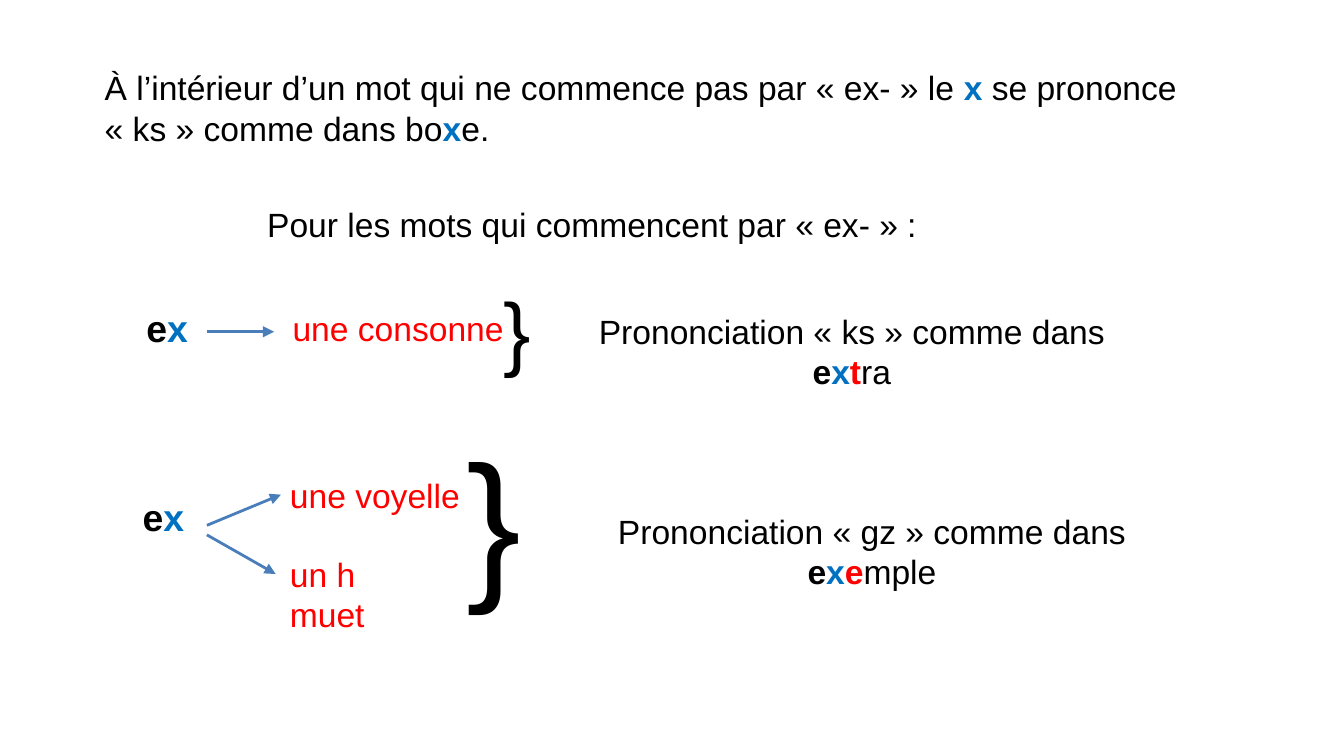
from lxml import etree
from pptx import Presentation
from pptx.dml.color import RGBColor
from pptx.enum.shapes import MSO_CONNECTOR
from pptx.enum.text import MSO_AUTO_SIZE, PP_ALIGN
from pptx.oxml.ns import qn
from pptx.util import Cm, Pt

BLACK, BLUE, RED, ARROW = "000000", "0070C0", "FF0000", "4A7EBB"
EX = [("e", BLACK, True), ("x", BLUE, True)]


def rgb(code):
    return RGBColor.from_string(code)


class Lesson:
    """Text style and the slide being filled."""

    font = "Arial"
    inset_x, inset_y = 0.25, 0.13

    def __init__(self, s):
        self.s = s

    def text(self, x, y, w, h, runs, size=18, centred=False, wrap=True,
             right=0.28):
        """Add a text box; runs are (text, colour, bold) tuples."""
        tf = self.s.shapes.add_textbox(Cm(x), Cm(y), Cm(w), Cm(h)).text_frame
        tf.word_wrap = wrap
        tf.auto_size = MSO_AUTO_SIZE.SHAPE_TO_FIT_TEXT
        tf.margin_left, tf.margin_right = Cm(self.inset_x), Cm(right)
        tf.margin_top = tf.margin_bottom = Cm(self.inset_y)
        p = tf.paragraphs[0]
        p.alignment = PP_ALIGN.CENTER if centred else PP_ALIGN.LEFT
        for words, colour, bold in runs:
            r = p.add_run()
            r.text = words
            r.font.name, r.font.size = self.font, Pt(size)
            r.font.bold = bold
            r.font.color.rgb = rgb(colour)
        return tf

    def arrow(self, x1, y1, x2, y2):
        line = self.s.shapes.add_connector(
            MSO_CONNECTOR.STRAIGHT, Cm(x1), Cm(y1), Cm(x2), Cm(y2))
        line.line.color.rgb = rgb(ARROW)
        line.line.width = Pt(1.5)
        sp_pr = line._element.spPr
        etree.SubElement(sp_pr.find(qn("a:ln")), qn("a:tailEnd"),
                         type="triangle")
        etree.SubElement(sp_pr, qn("a:effectLst"))

    def brace(self, x, y, w, h, size):
        self.text(x, y, w, h, [("}", BLACK, False)], size, wrap=False)

    def following(self, x, y, w, words):
        """Name the kind of letter that follows ex."""
        self.text(x, y, w, 1.02, [(words, RED, False)])

    def pronunciation(self, x, y, w, sound, letter, ending):
        intro = f"Prononciation « {sound} » comme dans "
        self.text(x, y, w, 1.02, [(intro, BLACK, False), *EX,
                                  (letter, RED, True),
                                  (ending, BLACK, False)], centred=True)


def main():
    prs = Presentation()
    prs.slide_width, prs.slide_height = Cm(25.4), Cm(14.29)
    lesson = Lesson(prs.slides.add_slide(prs.slide_layouts[6]))

    lesson.text(1.73, 1.14, 21.21, 1.78, [
        ("À l’intérieur d’un mot qui ne commence pas par « ex- » le ",
         BLACK, False),
        ("x", BLUE, True),
        (" se prononce « ks » comme dans bo", BLACK, False),
        ("x", BLUE, True),
        ("e.", BLACK, False)])
    lesson.text(4.8, 3.73, 15.06, 1.02, [
        ("Pour les mots qui commencent par « ex- » :", BLACK, False)])

    # ex before a consonant
    lesson.text(2.51, 5.64, 1.3, 1.09, EX, 20, centred=True, wrap=False,
                right=0.25)
    lesson.arrow(3.91, 6.27, 5.18, 6.27)
    lesson.following(5.28, 5.69, 4.65, "une consonne")
    lesson.brace(9.27, 5.16, 1.02, 2.11, 44)
    lesson.pronunciation(10.26, 5.74, 11.71, "ks", "t", "ra")

    # ex before a vowel or a silent h
    tf = lesson.text(2.49, 9.35, 1.6, 1.6, EX, 20, centred=True, right=0.4)
    tf.auto_size = MSO_AUTO_SIZE.NONE
    tf.margin_left = tf.margin_top = tf.margin_bottom = 0
    lesson.arrow(3.91, 9.93, 5.31, 9.35)
    lesson.arrow(3.91, 10.11, 5.21, 10.85)
    lesson.following(5.23, 8.84, 3.89, "une voyelle")
    lesson.following(5.23, 10.34, 3.33, "un h muet")
    lesson.brace(8.56, 7.75, 1.55, 3.96, 88)
    lesson.pronunciation(10.16, 9.53, 12.67, "gz", "e", "mple")

    prs.save("out.pptx")


if __name__ == "__main__":
    main()
